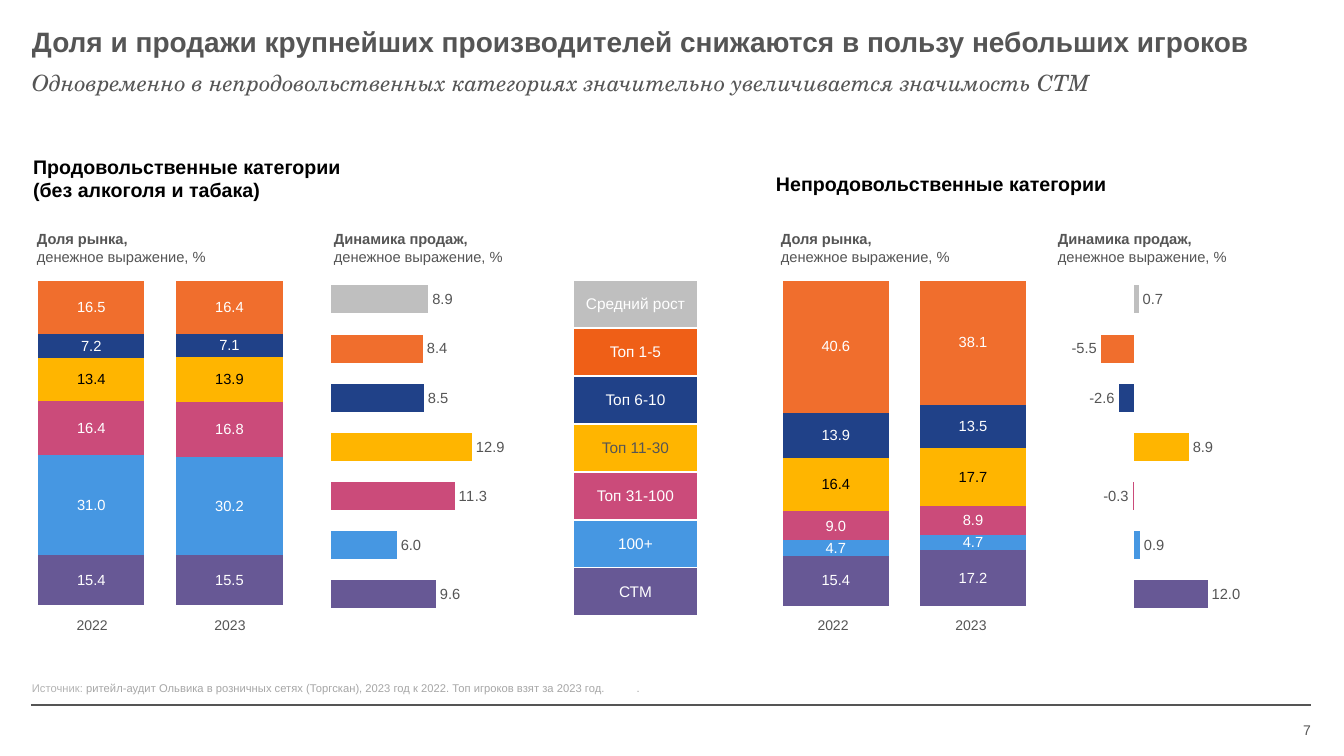
from lxml import etree
from pptx import Presentation
from pptx import util as u
from pptx.chart.data import CategoryChartData
from pptx.dml.color import RGBColor
from pptx.enum import chart as ch, shapes, text
from pptx.oxml import parse_xml
from pptx.oxml.ns import qn

PX = 914400 / 100.8
THEME = {
    "font": "Arial", "serif": "TeX Gyre Schola",
    "ink": "555555", "black": "000000", "white": "FFFFFF",
    "pale": "B3B3B3", "muted": "A6A6A6",
    "title": 20, "subtitle": 16, "heading": 14, "legend": 11,
    "label": 10.5, "small": 10, "source": 8,
}
TIERS = ["Toп 1-5", "Toп 6-10", "Toп 11-30", "Toп 31-100", "100+", "СТМ"]
TIER_COLOURS = ["F06E2D", "204188", "FFB500", "CB4B7A", "4697E2", "675895"]
GROWTH_ROWS = ["Средний рост"] + TIERS
GROWTH_COLOURS = ["BFBFBF"] + TIER_COLOURS
YEARS = ["2022", "2023"]


def put_text(paragraphs, box, size=THEME["small"], color=THEME["ink"], font=THEME["font"],
             bold=False, italic=False, align=text.PP_ALIGN.LEFT,
             anchor=text.MSO_ANCHOR.TOP, side=0, inset=5, tight=False):
    """Each paragraph is a list of (words, overrides); a leading newline breaks the line."""
    frame = slide.shapes.add_textbox(*[u.Emu(round(v * PX)) for v in box]).text_frame
    frame.word_wrap = True
    frame.vertical_anchor = anchor
    frame.margin_left = frame.margin_right = u.Emu(round(side * PX))
    frame.margin_top = frame.margin_bottom = u.Emu(round(inset * PX))
    for i, runs in enumerate(paragraphs):
        p = frame.paragraphs[0] if i == 0 else frame.add_paragraph()
        p.alignment = align
        if tight:
            p.line_spacing = u.Pt(9.2)
            p.space_before = u.Pt(7 if i else 0)
        for words, changes in runs:
            if words.startswith("\n"):
                p.add_line_break()
            r = p.add_run()
            r.text = words.lstrip("\n")
            r.font.name, r.font.size = font, u.Pt(size)
            r.font.bold, r.font.italic = changes.get("bold", bold), italic
            r.font.color.rgb = RGBColor.from_string(changes.get("color", color))


def put_chart(kind, data, box, plot_area, gap, low, high):
    """Add a chart with a fixed inner plot area and value range, without axes or grid."""
    chart = slide.shapes.add_chart(kind, *[u.Emu(round(v * PX)) for v in box], data).chart
    chart.has_legend = chart.has_title = False
    chart.font.name, chart.font.size = THEME["font"], u.Pt(THEME["small"])
    chart.font.color.rgb = RGBColor.from_string(THEME["ink"])
    chart.category_axis.visible = False
    axis = chart.value_axis
    axis.visible = axis.has_major_gridlines = False
    axis.minimum_scale, axis.maximum_scale = low, high
    chart.plots[0].gap_width = gap
    chart.plots[0].vary_by_categories = False
    area = chart._chartSpace.find(".//" + qn("c:plotArea"))
    for old in area.findall(qn("c:layout")):
        area.remove(old)
    parts = "".join(f'<c:{n} val="{v}"/>' for n, v in zip("xywh", plot_area))
    area.insert(0, parse_xml(
        '<c:layout xmlns:c="http://schemas.openxmlformats.org/drawingml/2006/chart">'
        '<c:manualLayout><c:layoutTarget val="inner"/><c:xMode val="edge"/>'
        f'<c:yMode val="edge"/>{parts}</c:manualLayout></c:layout>'))
    for series in chart.plots[0].series:
        series.invert_if_negative = False
        labels = series.data_labels
        labels.show_value = True
        labels.number_format, labels.number_format_is_linked = "#,##0.0", False
        labels.font.name, labels.font.size = THEME["font"], u.Pt(THEME["label"])
        labels.font.color.rgb = RGBColor.from_string(THEME["ink"])
    return chart


prs = Presentation()
prs.slide_width, prs.slide_height = u.Emu(round(1344 * PX)), u.Emu(round(756 * PX))
slide = prs.slides.add_slide(prs.slide_layouts[6])

# Title, subtitle, source and page number
put_text([[("Доля и продажи крупнейших производителей снижаются в пользу небольших игроков", {})]],
         (32, 20, 1277, 43), size=THEME["title"], bold=True)
put_text([[("Одновременно в непродовольственных категориях значительно увеличивается значимость СТМ", {})]],
         (32, 64, 1277, 48), size=THEME["subtitle"], font=THEME["serif"], italic=True)
put_text([[("Источник: ", {}),
           ("ритейл-аудит Ольвика в розничных сетях (Торгскан), 2023 год к 2022. "
            "Топ игроков взят за 2023 год.\t.", {"color": THEME["muted"]})]],
         (32, 660, 1277, 40), size=THEME["source"], color=THEME["pale"],
         anchor=text.MSO_ANCHOR.BOTTOM)
put_text([[("7", {})]], (1211, 710, 100, 40), align=text.PP_ALIGN.RIGHT,
         anchor=text.MSO_ANCHOR.MIDDLE)

# Footer rule
rule = slide.shapes.add_connector(shapes.MSO_CONNECTOR.STRAIGHT, *[
    u.Emu(round(v * PX)) for v in (31, 705, 1311, 705)])
rule.line.color.rgb = RGBColor.from_string(THEME["ink"])
rule.line.width = u.Pt(1)
etree.SubElement(rule._element.spPr, qn("a:effectLst"))

# Category headings
put_text([[("Продовольственные категории", {})], [("(без алкоголя и табака)", {})]],
         (23, 161, 395, 42), size=THEME["heading"], color=THEME["black"],
         bold=True, side=10, tight=True)
put_text([[("Непродовольственные категории", {})]], (776, 162, 417, 42),
         size=THEME["heading"], color=THEME["black"], bold=True, inset=10)

# Share and growth for food, then non-food
panels = [
    {"share_box": (14, 266, 295, 420), "growth_box": (289, 250, 262, 394),
     "captions": (37, 334), "year_left": 48, "range": (0, 14),
     "shares": [(16.5, 16.4), (7.2, 7.1), (13.4, 13.9), (16.4, 16.8), (31.0, 30.2), (15.4, 15.5)],
     "growth": (8.9, 8.4, 8.5, 12.9, 11.3, 6.0, 9.6)},
    {"share_box": (759, 266, 293, 420), "growth_box": (1031, 250, 262, 394),
     "captions": (781, 1058), "year_left": 789, "range": (-10, 15),
     "shares": [(40.6, 38.1), (13.9, 13.5), (16.4, 17.7), (9.0, 8.9), (4.7, 4.7), (15.4, 17.2)],
     "growth": (0.7, -5.5, -2.6, 8.9, -0.3, 0.9, 12.0)},
]
for panel in panels:
    # Market share stacks, growing downwards
    share_data = CategoryChartData(number_format="0.0")
    share_data.categories = YEARS
    for tier, values in zip(TIERS, panel["shares"]):
        share_data.add_series(tier, values)
    share = put_chart(ch.XL_CHART_TYPE.COLUMN_STACKED, share_data, panel["share_box"],
                      (0.028, 0.035, 0.937, 0.929), 30, 0, 120)
    share.plots[0].overlap = 100
    share.value_axis.reverse_order = True
    for series, colour in zip(share.plots[0].series, TIER_COLOURS):
        series.format.fill.solid()
        series.format.fill.fore_color.rgb = RGBColor.from_string(colour)
        series.data_labels.position = ch.XL_LABEL_POSITION.CENTER
        label_colour = THEME["black"] if colour == "FFB500" else THEME["white"]
        series.data_labels.font.color.rgb = RGBColor.from_string(label_colour)

    # Sales growth bars
    growth_data = CategoryChartData(number_format="0.0")
    growth_data.categories = GROWTH_ROWS
    growth_data.add_series("Динамика продаж", panel["growth"])
    growth = put_chart(ch.XL_CHART_TYPE.BAR_CLUSTERED, growth_data, panel["growth_box"],
                       (0.162, 0.063, 0.583, 0.874), 75, *panel["range"])
    growth.category_axis.reverse_order = True
    bars = growth.plots[0].series[0]
    bars.data_labels.position = ch.XL_LABEL_POSITION.OUTSIDE_END
    for i, colour in enumerate(GROWTH_COLOURS):
        fill = bars.points[i].format.fill
        fill.solid()
        fill.fore_color.rgb = RGBColor.from_string(colour)

    # Captions above and years below
    for left, caption in zip(panel["captions"], ("Доля рынка,", "Динамика продаж,")):
        put_text([[(caption, {"bold": True}), ("\nденежное выражение, %", {})]],
                 (left, 225, 226, 45), size=THEME["label"])
    for i, year in enumerate(YEARS):
        put_text([[(year, {})]], (panel["year_left"] + 138 * i, 615, 88, 28),
                 align=text.PP_ALIGN.CENTER, side=10, tight=True)

# Legend shared by both panels
legend = slide.shapes.add_table(len(GROWTH_ROWS), 1, *[
    u.Emu(round(v * PX)) for v in (573, 280, 125, 48 * len(GROWTH_ROWS))]).table
legend.first_row = legend.horz_banding = False
legend_colours = ["BFBFBF", "EF5F17"] + TIER_COLOURS[1:]
for i, (name, colour) in enumerate(zip(GROWTH_ROWS, legend_colours)):
    cell = legend.cell(i, 0)
    cell.margin_left = cell.margin_right = cell.margin_top = cell.margin_bottom = 0
    cell.vertical_anchor = text.MSO_ANCHOR.MIDDLE
    props = cell._tc.get_or_add_tcPr()
    for side in ("lnL", "lnR", "lnT", "lnB"):
        border = etree.SubElement(props, qn("a:" + side), w=str(u.Pt(1)))
        paint = etree.SubElement(border, qn("a:solidFill"))
        etree.SubElement(paint, qn("a:srgbClr"), val=THEME["white"])
    cell.fill.solid()
    cell.fill.fore_color.rgb = RGBColor.from_string(colour)
    p = cell.text_frame.paragraphs[0]
    p.alignment = text.PP_ALIGN.CENTER
    r = p.add_run()
    r.text = name
    r.font.name, r.font.size = THEME["font"], u.Pt(THEME["legend"])
    r.font.color.rgb = RGBColor.from_string(THEME["ink" if colour == "FFB500" else "white"])

prs.save("out.pptx")
